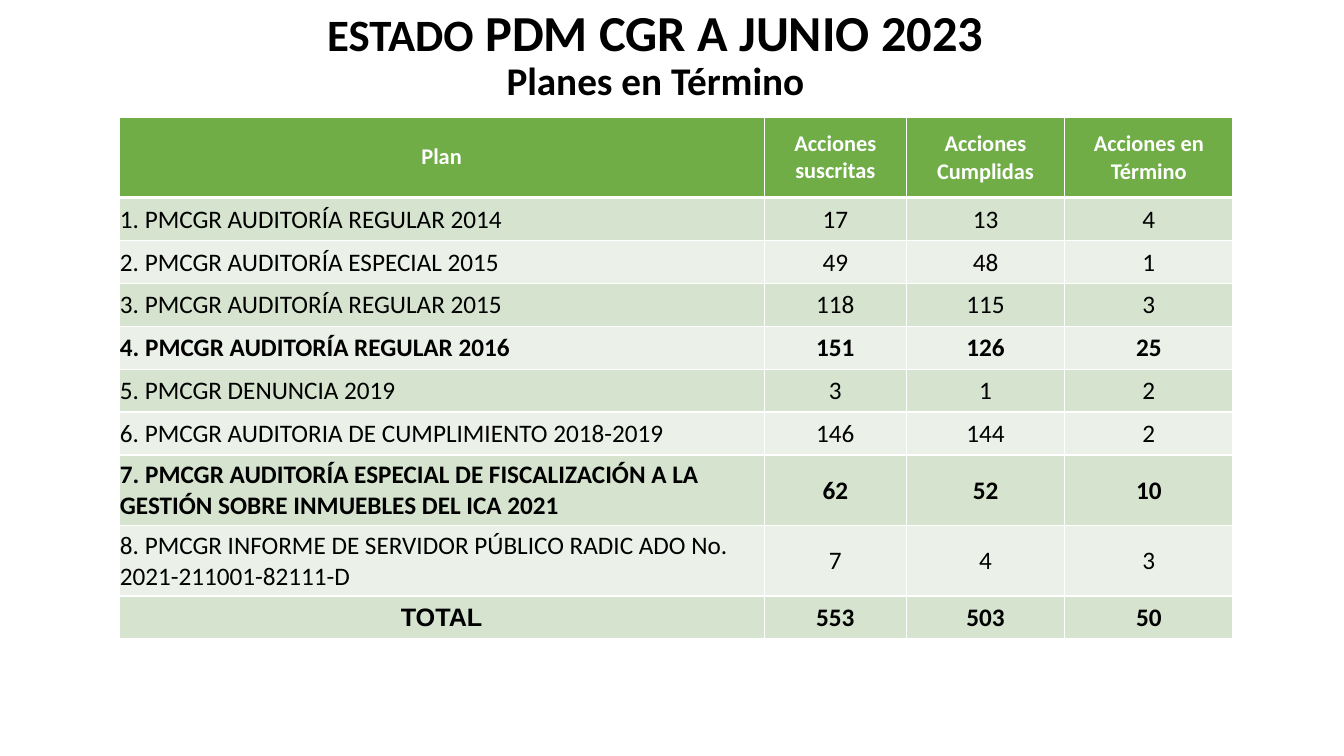
import pptx
import pptx.util
import pptx.dml.color
import pptx.enum.text
import pptx.oxml
import pptx.oxml.ns
from lxml import etree

Inches = pptx.util.Inches
Pt = pptx.util.Pt
RGBColor = pptx.dml.color.RGBColor
ALIGN = pptx.enum.text.PP_ALIGN
ANCHOR = pptx.enum.text.MSO_ANCHOR
qn = pptx.oxml.ns.qn

WHITE = RGBColor(0xFF, 0xFF, 0xFF)
BLACK = RGBColor(0x00, 0x00, 0x00)
GREEN = RGBColor(0x70, 0xAD, 0x47)
DARK_BAND = RGBColor(0xD5, 0xE3, 0xCF)
LIGHT_BAND = RGBColor(0xEB, 0xF1, 0xE9)

COLUMN_WIDTHS = [6.4, 1.41, 1.57, 1.67]
HEADER_HEIGHT = 0.8
TALL_HEIGHT = 0.7
TALL_ROWS = {7, 8}
BOLD_ROWS = {0, 4, 7, 9}
ROWS = [
    ("Plan", "Acciones suscritas", "Acciones Cumplidas", "Acciones en Término"),
    ("1. PMCGR AUDITORÍA REGULAR 2014", 17, 13, 4),
    ("2. PMCGR AUDITORÍA ESPECIAL 2015", 49, 48, 1),
    ("3. PMCGR AUDITORÍA REGULAR 2015", 118, 115, 3),
    ("4. PMCGR AUDITORÍA REGULAR 2016", 151, 126, 25),
    ("5. PMCGR DENUNCIA 2019", 3, 1, 2),
    ("6. PMCGR AUDITORIA DE CUMPLIMIENTO 2018-2019", 146, 144, 2),
    ("7. PMCGR AUDITORÍA ESPECIAL DE FISCALIZACIÓN A LA GESTIÓN SOBRE "
     "INMUEBLES DEL ICA 2021", 62, 52, 10),
    ("8. PMCGR INFORME DE SERVIDOR PÚBLICO RADIC ADO No. "
     "2021-211001-82111-D", 7, 4, 3),
    ("TOTAL", 553, 503, 50),
]


def format_span(span, size, color, bold, name="Calibri"):
    span.font.name = name
    span.font.size = Pt(size)
    span.font.bold = bold
    span.font.color.rgb = color


def add_title(page, left, top, width, height):
    title = page.shapes.title
    title.left, title.top = Inches(left), Inches(top)
    title.width, title.height = Inches(width), Inches(height)
    frame = title.text_frame
    frame.word_wrap = True
    frame.auto_size = pptx.enum.text.MSO_AUTO_SIZE.NONE
    frame.vertical_anchor = ANCHOR.MIDDLE
    para = frame.paragraphs[0]
    para.alignment = ALIGN.CENTER
    para.line_spacing = 0.9
    para.text = "ESTADO"
    format_span(para.runs[0], 32, BLACK, True)
    span = para.add_run()
    span.text = " PDM CGR A JUNIO 2023"
    format_span(span, 36, BLACK, True)
    para.add_line_break()
    etree.SubElement(para._p[-1], qn("a:rPr"), sz="3600")
    span = para.add_run()
    span.text = "Planes en Término"
    format_span(span, 28, BLACK, True)


def add_borders(cell, row):
    widths = {"lnL": 1, "lnR": 1, "lnT": 3 if row == 1 else 1, "lnB": 3 if row == 0 else 1}
    properties = cell._tc.get_or_add_tcPr()
    for side, width in widths.items():
        line = etree.SubElement(properties, qn(f"a:{side}"), w=str(Pt(width)))
        fill = etree.SubElement(line, qn("a:solidFill"))
        etree.SubElement(fill, qn("a:srgbClr"), val=str(WHITE))


def fill_cell(cell, row, column, value):
    is_header = row == 0
    is_total = row == len(ROWS) - 1
    add_borders(cell, row)
    cell.fill.solid()
    cell.fill.fore_color.rgb = GREEN if is_header else DARK_BAND if row % 2 else LIGHT_BAND
    cell.vertical_anchor = ANCHOR.MIDDLE
    margin = Inches(0 if is_header and column < 2 else 0.01)
    cell.margin_left = cell.margin_right = cell.margin_top = margin
    cell.margin_bottom = 0
    para = cell.text_frame.paragraphs[0]
    para.text = str(value)
    centred = column > 0 or is_header or is_total
    para.alignment = ALIGN.CENTER if centred else ALIGN.LEFT
    name = "Arial" if is_total and column == 0 else "Calibri"
    size, color = (16, WHITE) if is_header else (18, BLACK)
    format_span(para.runs[0], size, color, row in BOLD_ROWS, name)


def add_plan_table(page, left, top, width, height):
    table = page.shapes.add_table(
        len(ROWS), len(COLUMN_WIDTHS),
        Inches(left), Inches(top), Inches(width), Inches(height)).table
    for column, column_width in zip(table.columns, COLUMN_WIDTHS):
        column.width = Inches(column_width)
    tall_total = TALL_HEIGHT * len(TALL_ROWS)
    short_height = (height - HEADER_HEIGHT - tall_total) / (len(ROWS) - 1 - len(TALL_ROWS))
    for row, values in enumerate(ROWS):
        row_height = TALL_HEIGHT if row in TALL_ROWS else short_height
        table.rows[row].height = Inches(HEADER_HEIGHT if row == 0 else row_height)
        for column, value in enumerate(values):
            fill_cell(table.cell(row, column), row, column, value)


def main():
    deck = pptx.Presentation()
    deck.slide_width, deck.slide_height = Inches(13.33), Inches(7.5)
    page = deck.slides.add_slide(deck.slide_layouts[5])
    add_title(page, -0.22, 0.13, 13.44, 0.85)
    add_plan_table(page, 1.18, 1.16, sum(COLUMN_WIDTHS), 5.18)
    deck.save("out.pptx")


if __name__ == "__main__":
    main()
